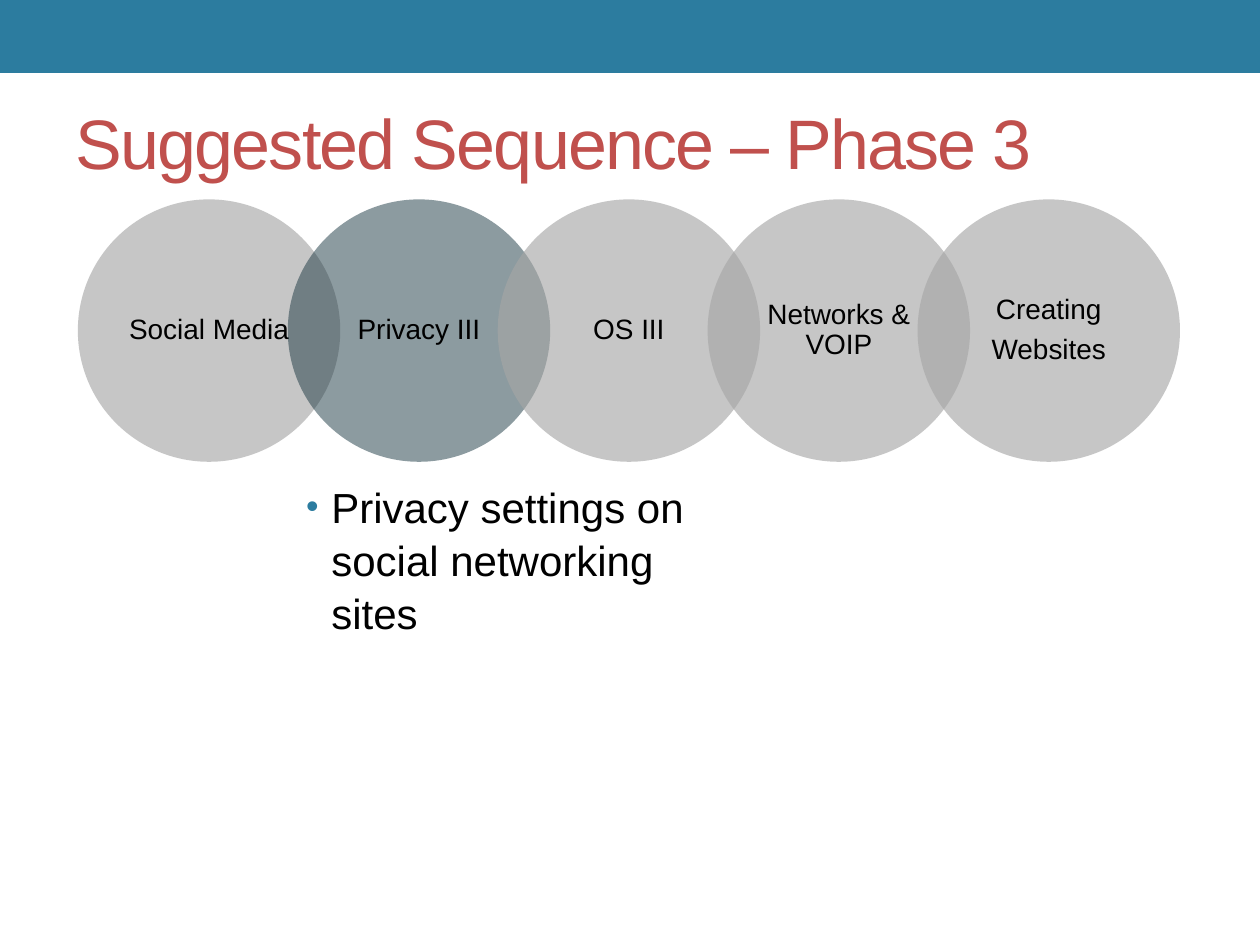
from dataclasses import dataclass

from lxml.etree import SubElement
from pptx import Presentation
from pptx.dml.color import RGBColor
from pptx.enum.shapes import MSO_SHAPE as Preset
from pptx.enum.text import MSO_ANCHOR as Anchor, PP_ALIGN as Align
from pptx.oxml.ns import qn
from pptx.util import Cm, Pt

TEAL = RGBColor(0x2C, 0x7C, 0x9F)
RED = RGBColor(0xC0, 0x50, 0x4D)
GRAY = RGBColor(0xA6, 0xA6, 0xA6)
NAVY = RGBColor(0x1B, 0x38, 0x42)
BLACK = RGBColor(0, 0, 0)
WHITE = RGBColor(255, 255, 255)

FONT = "Arial"
CIRCLE_LEFT, CIRCLE_TOP = 1.57, 4.02
CIRCLE_SIZE, LABEL_SIZE = 5.29, 3.74
CIRCLE_STEP = CIRCLE_SIZE * 0.8
LABEL_INSET = (CIRCLE_SIZE - LABEL_SIZE) / 2


@dataclass
class Topic:
    lines: tuple[str, ...]
    color: RGBColor = GRAY
    opacity: int = 64
    margin: float = 0


TOPICS = [
    Topic(("Social Media",)),
    Topic(("Privacy III",), NAVY, 50),
    Topic(("OS III",)),
    Topic(("Networks & VOIP",), margin=0.28),
    Topic(("Creating", "Websites"), margin=0.28),
]


def add_solid(page, preset, left: float, top: float, width: float,
              height: float, color: RGBColor, opacity: int = 100) -> None:
    shape = page.shapes.add_shape(preset, Cm(left), Cm(top), Cm(width), Cm(height))
    shape.shadow.inherit = False
    shape.fill.solid()
    shape.fill.fore_color.rgb = color
    shape.line.fill.background()
    if opacity < 100:
        tint = shape.fill._xPr.find(qn("a:solidFill"))[0]
        SubElement(tint, qn("a:alpha"), val=str(opacity * 1000))


def add_text(page, lines: tuple[str, ...], left: float, top: float, width: float,
             height: float, size: int, color: RGBColor, anchor=Anchor.MIDDLE):
    box = page.shapes.add_textbox(Cm(left), Cm(top), Cm(width), Cm(height))
    frame = box.text_frame
    frame.word_wrap = True
    frame.vertical_anchor = anchor
    frame.text = "\n".join(lines)
    for para in frame.paragraphs:
        para.font.name = FONT
        para.font.size = Pt(size)
        para.font.color.rgb = color
    return frame


def add_topic(page, topic: Topic, left: float) -> None:
    add_solid(page, Preset.OVAL, left, CIRCLE_TOP, CIRCLE_SIZE, CIRCLE_SIZE,
              topic.color, topic.opacity)
    frame = add_text(page, topic.lines, left + LABEL_INSET, CIRCLE_TOP + LABEL_INSET,
                     LABEL_SIZE, LABEL_SIZE, 16, BLACK)
    frame.margin_left = frame.margin_right = Cm(topic.margin)
    frame.margin_top = frame.margin_bottom = Cm(0.05)
    for para in frame.paragraphs:
        para.alignment = Align.CENTER
        para.line_spacing = 0.9
        para.space_after = Pt(6)


def add_bullet(para, color: RGBColor) -> None:
    props = para._p.get_or_add_pPr()
    indent = Cm(0.51)
    props.set("marL", str(indent))
    props.set("indent", str(-indent))
    para.space_before = Pt(5)
    para.line_spacing = 1.05
    marks = [
        SubElement(props, qn("a:buClr")),
        SubElement(props, qn("a:buSzPct"), val="85000"),
        SubElement(props, qn("a:buFont"), typeface=FONT),
        SubElement(props, qn("a:buChar"), char="•"),
    ]
    SubElement(marks[0], qn("a:srgbClr"), val=str(color))
    props.append(props.find(qn("a:defRPr")))


def main() -> None:
    deck = Presentation()
    deck.slide_width, deck.slide_height = Cm(25.4), Cm(19.05)
    page = deck.slides.add_slide(deck.slide_layouts[6])
    page.background.fill.solid()
    page.background.fill.fore_color.rgb = WHITE

    add_solid(page, Preset.RECTANGLE, 0, 0, 25.4, 1.47, TEAL)
    title = add_text(page, ("Suggested Sequence – Phase 3",),
                     1.27, 1.47, 22.86, 2.75, 40, RED)
    title.paragraphs[0].runs[0].font._element.set("spc", "-100")

    for index, topic in enumerate(TOPICS):
        add_topic(page, topic, CIRCLE_LEFT + index * CIRCLE_STEP)

    body = add_text(page, ("Privacy settings on social networking sites",),
                    5.92, 9.53, 9.32, 5.72, 24, BLACK, Anchor.TOP)
    add_bullet(body.paragraphs[0], TEAL)

    deck.save("out.pptx")


if __name__ == "__main__":
    main()
